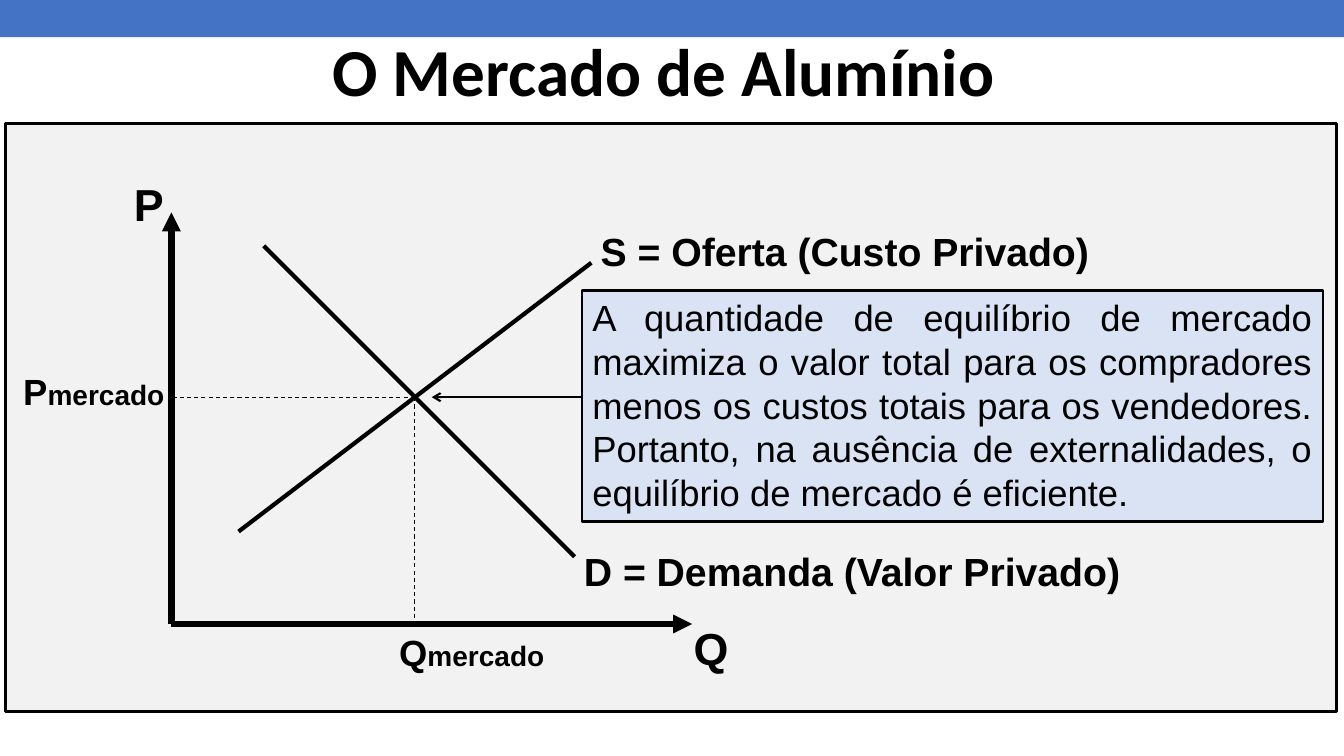
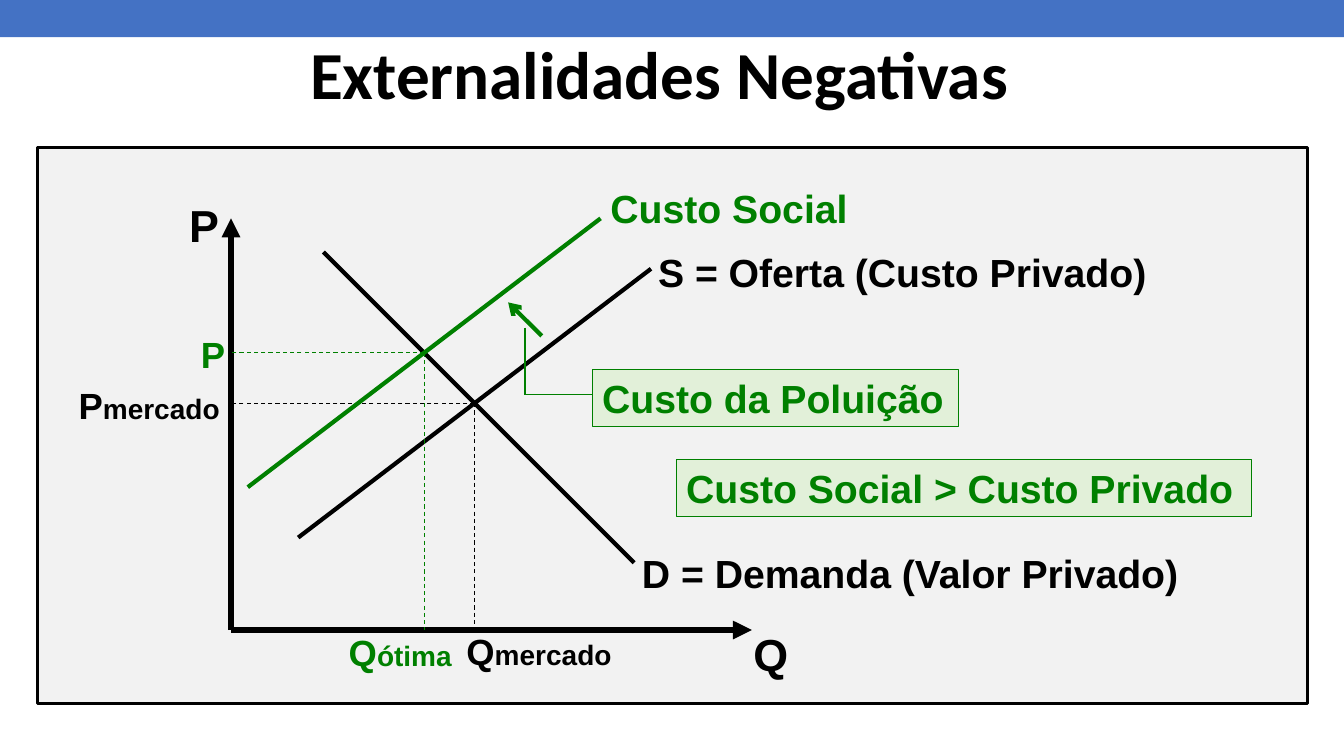
"""Build two slides on market balance and the cost of pollution."""
from dataclasses import dataclass

from lxml.etree import SubElement
from pptx import Presentation
from pptx.dml.color import RGBColor as Rgb
from pptx.enum.dml import MSO_LINE as Dash
from pptx.enum.shapes import MSO_CONNECTOR as Link, MSO_SHAPE as Form
from pptx.enum.text import MSO_ANCHOR as Anchor, MSO_AUTO_SIZE as Fit, PP_ALIGN as Align
from pptx.oxml.ns import qn
from pptx.slide import Slide
from pptx.util import Pt

HUES = {
    "black": "000000",
    "blue": "4472C4",
    "grey": "F2F2F2",
    "sky": "DAE3F3",
    "green": "008000",
    "mint": "E2F0D9",
}
Point = tuple[float, float]
Frame = tuple[float, float, float, float]
CROSS = (174, -162)
BEST = (138, -198)
SUPPLY = ((48, -66), (300, -258))
SHIFT = -36


@dataclass
class Stroke:
    start: Point
    end: Point
    width: float
    hue: str = "black"
    head: str = ""
    dash: bool = False


@dataclass
class Label:
    text: str
    frame: Frame
    size: float = 28
    hue: str = "black"
    sub: str = ""
    bold: bool = True
    fill: str = ""
    edge: float = 0.75
    align: Align = Align.LEFT


def tint(name: str) -> Rgb:
    return Rgb.from_string(HUES[name])


def place(frame: Frame) -> list[Pt]:
    return [Pt(n) for n in frame]


def add_box(slide: Slide, frame: Frame, fill: str, edge: float = 0, hue: str = "black"):
    box = slide.shapes.add_shape(Form.RECTANGLE, *place(frame))
    box.shadow.inherit = False
    box.fill.solid()
    box.fill.fore_color.rgb = tint(fill)
    if edge:
        box.line.color.rgb = tint(hue)
        box.line.width = Pt(edge)
    else:
        box.line.fill.background()
    return box


def add_stroke(slide: Slide, root: Point, item: Stroke) -> None:
    ends = [Pt(a + b) for spot in (item.start, item.end) for a, b in zip(root, spot)]
    line = slide.shapes.add_connector(Link.STRAIGHT, *ends)
    line.line.color.rgb = tint(item.hue)
    line.line.width = Pt(item.width)
    if item.dash:
        line.line.dash_style = Dash.DASH
    props = line.element.spPr
    if item.head:
        SubElement(props.find(qn("a:ln")), qn("a:tailEnd"), type=item.head)
    SubElement(props, qn("a:effectLst"))


def add_label(slide: Slide, item: Label) -> None:
    if item.fill:
        box = add_box(slide, item.frame, item.fill, item.edge, item.hue)
    else:
        box = slide.shapes.add_textbox(*place(item.frame))
    body = box.text_frame
    body.word_wrap = True
    body.auto_size = Fit.NONE
    body.vertical_anchor = Anchor.TOP
    para = body.paragraphs[0]
    para.alignment = item.align
    font = para.font
    font.name = "Arial"
    font.bold = item.bold
    font.size = Pt(item.size)
    font.color.rgb = tint(item.hue)
    para.add_run().text = item.text
    if item.sub:
        run = para.add_run()
        run.text = item.sub
        run.font.size = Pt(20)


def add_title(slide: Slide, text: str, frame: Frame) -> None:
    title = slide.shapes.title
    title.left, title.top, title.width, title.height = place(frame)
    body = title.text_frame
    body.text = text
    body.auto_size = Fit.NONE
    body.vertical_anchor = Anchor.MIDDLE
    para = body.paragraphs[0]
    para.alignment = Align.CENTER
    para.font.name = "Calibri"
    para.font.size = Pt(48)
    para.font.bold = True
    para.font.color.rgb = tint("black")


def add_drops(slide: Slide, root: Point, spot: Point, hue: str) -> None:
    for end in ((spot[0], 0), (0, spot[1])):
        add_stroke(slide, root, Stroke(spot, end, 0.75, hue, dash=True))


def add_graph(slide: Slide, root: Point) -> None:
    for item in (
        Stroke((0, 0), (0, -294), 4.5, head="triangle"),
        Stroke((0, 0), (372, 0), 4.5, head="triangle"),
        Stroke((66, -270), (288, -48), 3),
        Stroke(*SUPPLY, 3),
    ):
        add_stroke(slide, root, item)
    add_drops(slide, root, CROSS, "black")
    add_label(slide, Label("Q", (root[0] + 366, root[1] - 6, 42, 46), 32))


def add_market(slide: Slide) -> None:
    root = (122.4, 445.7)
    add_title(slide, "O Mercado de Alumínio", (227, 17, 494, 66))
    add_box(slide, (4, 88.5, 950.5, 420), "grey", 2.25)
    add_graph(slide, root)
    text = (
        "A quantidade de equilíbrio de mercado maximiza o valor total para os "
        "compradores menos os custos totais para os vendedores. Portanto, na "
        "ausência de externalidades, o equilíbrio de mercado é eficiente."
    )
    for item in (
        Label("P", (88.5, 122.5, 42, 46), 32),
        Label("S = Oferta (Custo Privado)", (422, 158.5, 392, 41)),
        Label("D = Demanda (Valor Privado)", (410, 387.5, 405, 41)),
        Label("Q", (278, 446.5, 122, 39), 26, sub="mercado"),
        Label("P", (9.5, 260, 120, 39), 26, sub="mercado"),
        Label(text, (416, 207.5, 529, 165), 26, bold=False, fill="sky",
              edge=1.5, align=Align.JUSTIFY),
    ):
        add_label(slide, item)
    add_stroke(slide, root, Stroke((294, -162), (186, -162), 1.5, head="arrow"))


def add_social(slide: Slide) -> None:
    root = (165, 450)
    add_title(slide, "Externalidades Negativas", (208, 0, 526, 104))
    add_box(slide, (26.5, 105.5, 907.5, 397), "grey", 2.25)
    add_graph(slide, root)
    start, end = ((x + SHIFT, y + SHIFT) for x, y in SUPPLY)
    for item in (
        Stroke(start, end, 3, "green"),
        Stroke((222, -210), (198, -234), 3, "green", "arrow"),
        Stroke((210, -216), (210, -168), 0.75, "green"),
        Stroke((210, -168), (258, -168), 0.75, "green"),
    ):
        add_stroke(slide, root, item)
    add_drops(slide, root, BEST, "green")
    for item in (
        Label("P", (128, 138, 42, 46), 32),
        Label("S = Oferta (Custo Privado)", (463, 173.5, 369, 41)),
        Label("D = Demanda (Valor Privado)", (451.5, 389, 407, 41)),
        Label("Q", (326, 445.5, 120, 39), 26, sub="mercado"),
        Label("P", (49, 270, 132, 39), 26, sub="mercado"),
        Label("Custo Social", (429, 128, 222, 41), hue="green"),
        Label("Q", (242, 446.5, 108, 39), 26, "green", "ótima"),
        Label("P", (136.5, 234, 108, 39), 26, "green"),
        Label("Custo da Poluição", (423, 264, 261.5, 41), hue="green", fill="mint"),
        Label("Custo Social > Custo Privado", (483, 328, 411, 41), hue="green", fill="mint"),
    ):
        add_label(slide, item)


def main() -> None:
    deck = Presentation()
    deck.slide_width, deck.slide_height = Pt(960), Pt(540)
    form = deck.slide_layouts[5]
    for step, draw in enumerate((add_market, add_social)):
        slide = deck.slides.add_slide(form)
        if step == 0:
            band = add_box(slide, (0, 0, 960, 26.5), "blue")
            form.shapes.element.append(band.element)
        draw(slide)
    deck.save("out.pptx")


if __name__ == "__main__":
    main()
